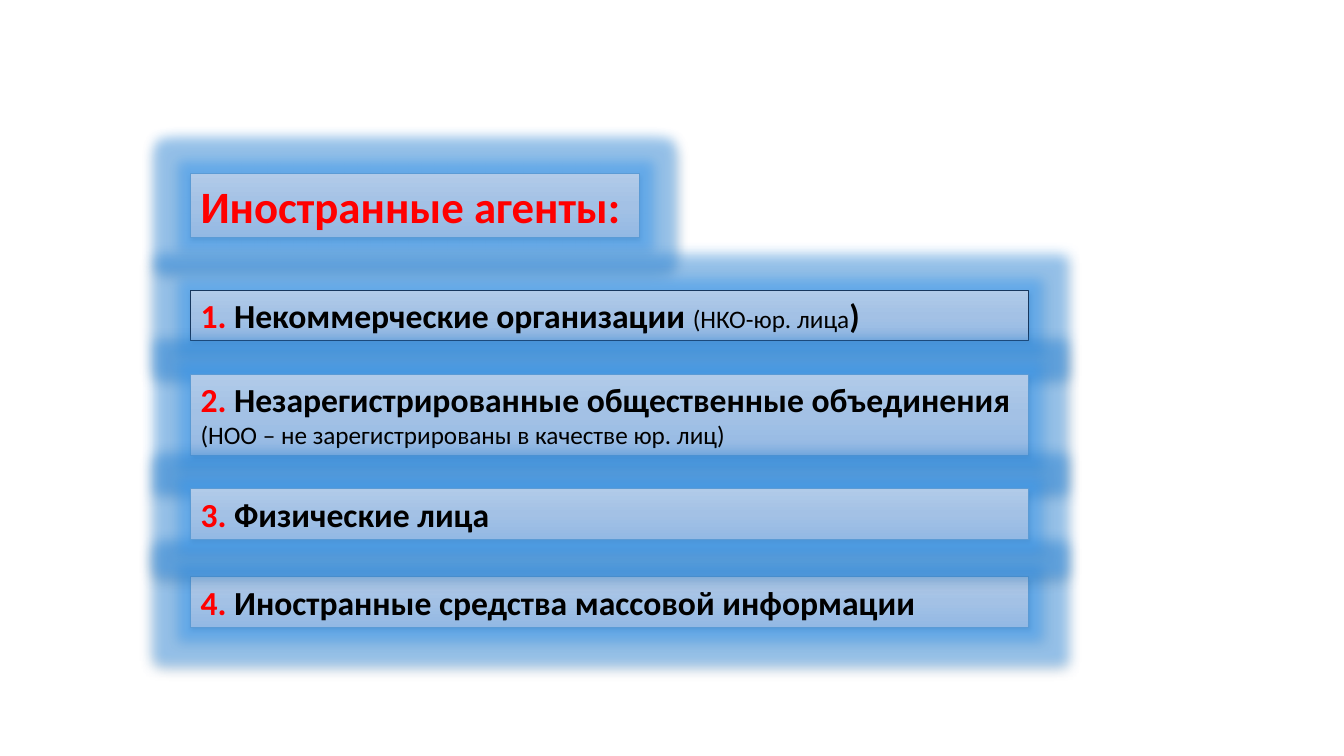
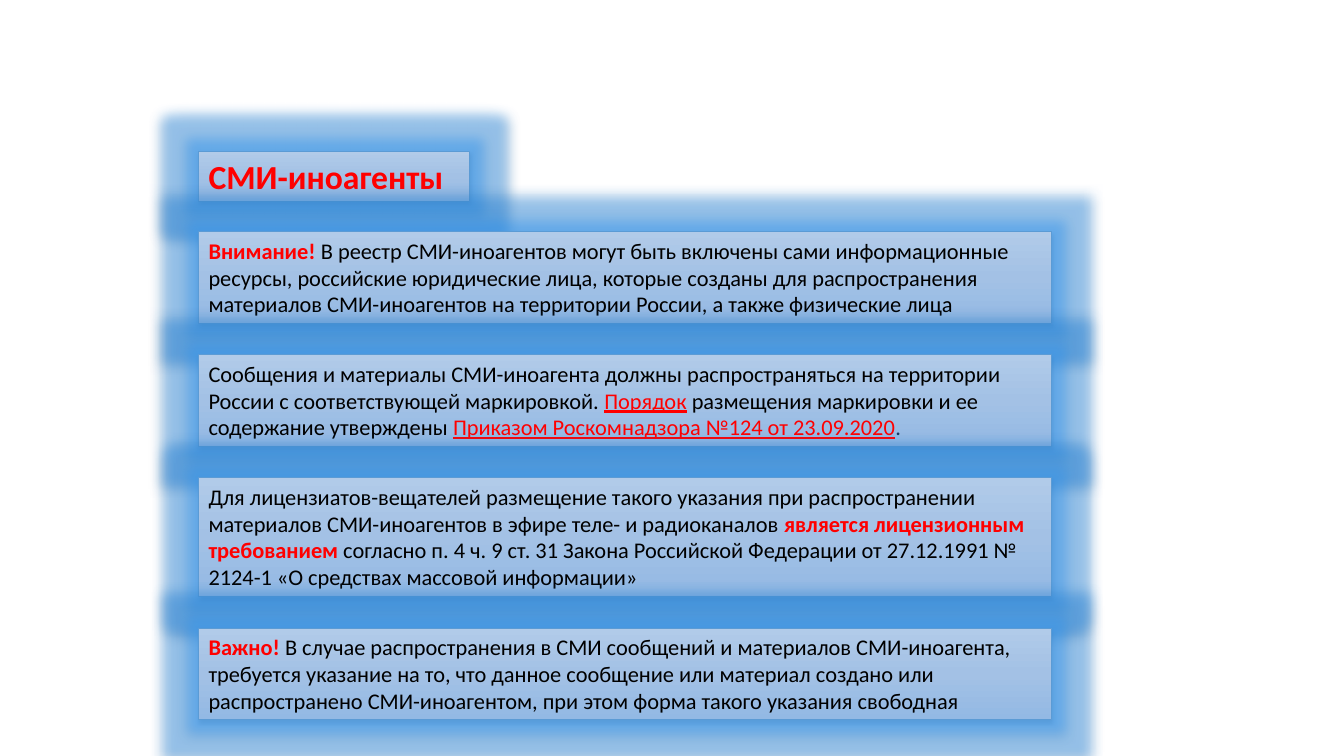
from lxml.etree import SubElement
from pptx import Presentation
from pptx.dml.color import RGBColor
from pptx.enum.shapes import MSO_SHAPE
from pptx.enum.text import MSO_ANCHOR, MSO_AUTO_SIZE, PP_ALIGN
from pptx.oxml import parse_xml
from pptx.oxml.ns import nsdecls, qn
from pptx.util import Emu, Pt

PX = 9144  # EMU in one px, 100 px to the inch
FONT = "Calibri"
COLORS = {
    "text": "000000",
    "accent": "FF0000",
    "border": "5B9BD5",
    "dark": "17375E",
    "glow": "5B9BD5",
    "shadow": "000000",
}
PANEL_STOPS = {0: "B1CBE9", 50: "A3C1E5", 100: "93B9E4"}

ACCENT = {"color": "accent"}
STRONG = {"color": "accent", "bold": True}
BOLD = {"bold": True}
SMALL = {"size": 18}
LINK = {"color": "accent", "underline": True}

AGENT_TYPES = {
    "nko": [("1. ", STRONG), ("Некоммерческие организации ", BOLD),
            ("(НКО-юр. лица", SMALL), (")", BOLD)],
    "noo": [("2. ", STRONG), ("Незарегистрированные общественные объединения ", BOLD),
            ("(НОО – не зарегистрированы в качестве юр. лиц)", SMALL)],
    "people": [("3. ", STRONG), ("Физические лица", BOLD)],
    "media": [("4. ", STRONG), ("Иностранные средства массовой информации", BOLD)],
}

MEDIA_RULES = [
    (91, [("Внимание! ", STRONG),
          ("В реестр СМИ-иноагентов могут быть включены сами информационные ресурсы, "
           "российские юридические лица, которые созданы для распространения материалов "
           "СМИ-иноагентов на территории России, а также физические лица", {})]),
    (91, [("Сообщения и материалы СМИ-иноагента должны распространяться на территории "
           "России с соответствующей маркировкой. ", {}),
          ("Порядок", LINK),
          (" размещения маркировки и ее содержание утверждены ", {}),
          ("Приказом Роскомнадзора №124 от 23.09.2020", LINK),
          (".", {"color": "dark"})]),
    (118, [("Для лицензиатов-вещателей размещение такого указания при распространении "
            "материалов СМИ-иноагентов в эфире теле- и радиоканалов ", {}),
           ("является лицензионным требованием ", STRONG),
           ("согласно п. 4 ч. 9 ст. 31 Закона Российской Федерации от 27.12.1991 № 2124-1 "
            "«О средствах массовой информации»", {})]),
    (91, [("Важно! ", STRONG),
          ("В случае распространения в СМИ сообщений и материалов СМИ-иноагента, требуется "
           "указание на то, что данное сообщение или материал создано или распространено "
           "СМИ-иноагентом, при этом форма такого указания свободная", {})]),
]


def px(n):
    return Emu(n * PX)


def rgb(name):
    return RGBColor.from_string(COLORS[name])


def add_color(parent, name, **changes):
    clr = SubElement(parent, qn("a:srgbClr"), val=COLORS[name])
    for tag, value in changes.items():
        SubElement(clr, qn(f"a:{tag}"), val=str(value))


def fill_gradient(sp):
    stops = "".join(f'<a:gs pos="{pos * 1000}"><a:srgbClr val="{color}"/></a:gs>'
                    for pos, color in PANEL_STOPS.items())
    grad = parse_xml(f'<a:gradFill {nsdecls("a")} rotWithShape="1"><a:gsLst>{stops}</a:gsLst>'
                     '<a:lin ang="5400000" scaled="0"/></a:gradFill>')
    sp._element.spPr.find(qn("a:ln")).addprevious(grad)


def add_halo(sp):
    """Give the shape a wide blue glow and a small shadow below."""
    sp.shadow.inherit = False
    effects = sp._element.spPr.find(qn("a:effectLst"))
    glow = SubElement(effects, qn("a:glow"), rad="228600")
    add_color(glow, "glow", satMod=175000, alpha=40000)
    shadow = SubElement(effects, qn("a:outerShdw"), blurRad="40000", dist="20000",
                        dir="5400000", rotWithShape="0")
    add_color(shadow, "shadow", alpha=38000)


def add_runs(p, runs):
    for text, style in runs:
        r = p.add_run()
        r.text = text
        r.font.color.rgb = rgb(style.get("color", "text"))
        r.font.bold = style.get("bold", False)
        if "size" in style:
            r.font.size = Pt(style["size"])
        if "underline" in style:
            r.font.underline = style["underline"]


def add_panel(s, box, runs, size, border="border"):
    sp = s.shapes.add_shape(MSO_SHAPE.RECTANGLE, *map(px, box))
    sp.line.color.rgb = rgb(border)
    sp.line.width = Pt(0.5)
    fill_gradient(sp)
    add_halo(sp)
    tf = sp.text_frame
    tf.word_wrap = True
    tf.auto_size = MSO_AUTO_SIZE.SHAPE_TO_FIT_TEXT
    tf.vertical_anchor = MSO_ANCHOR.TOP
    p = tf.paragraphs[0]
    p.alignment = PP_ALIGN.LEFT
    p.font.name = FONT
    p.font.size = Pt(size)
    add_runs(p, runs)


def add_slide(prs):
    return prs.slides.add_slide(prs.slide_layouts[6])


def build_agent_types(prs):
    s = add_slide(prs)
    left, width = 189, 831
    add_panel(s, (left, 172, 445, 64), [("Иностранные агенты:", STRONG)], 32)
    # Later panels cast their glow over earlier ones
    for name, top, height, border in (("media", 572, 50, "border"),
                                      ("nko", 288, 50, "dark"),
                                      ("noo", 371, 81, "border"),
                                      ("people", 485, 50, "border")):
        add_panel(s, (left, top, width, height), AGENT_TYPES[name], 24, border)


def build_media_rules(prs):
    s = add_slide(prs)
    left, top, width, gap = 197, 230, 846, 31
    add_panel(s, (left, 150, 269, 50), [("СМИ-иноагенты", STRONG)], 24)
    for height, runs in MEDIA_RULES:
        add_panel(s, (left, top, width, height), runs, 16)
        top += height + gap


def main():
    prs = Presentation()
    prs.slide_width, prs.slide_height = px(1333), px(750)
    build_agent_types(prs)
    build_media_rules(prs)
    prs.save("out.pptx")


if __name__ == "__main__":
    main()
